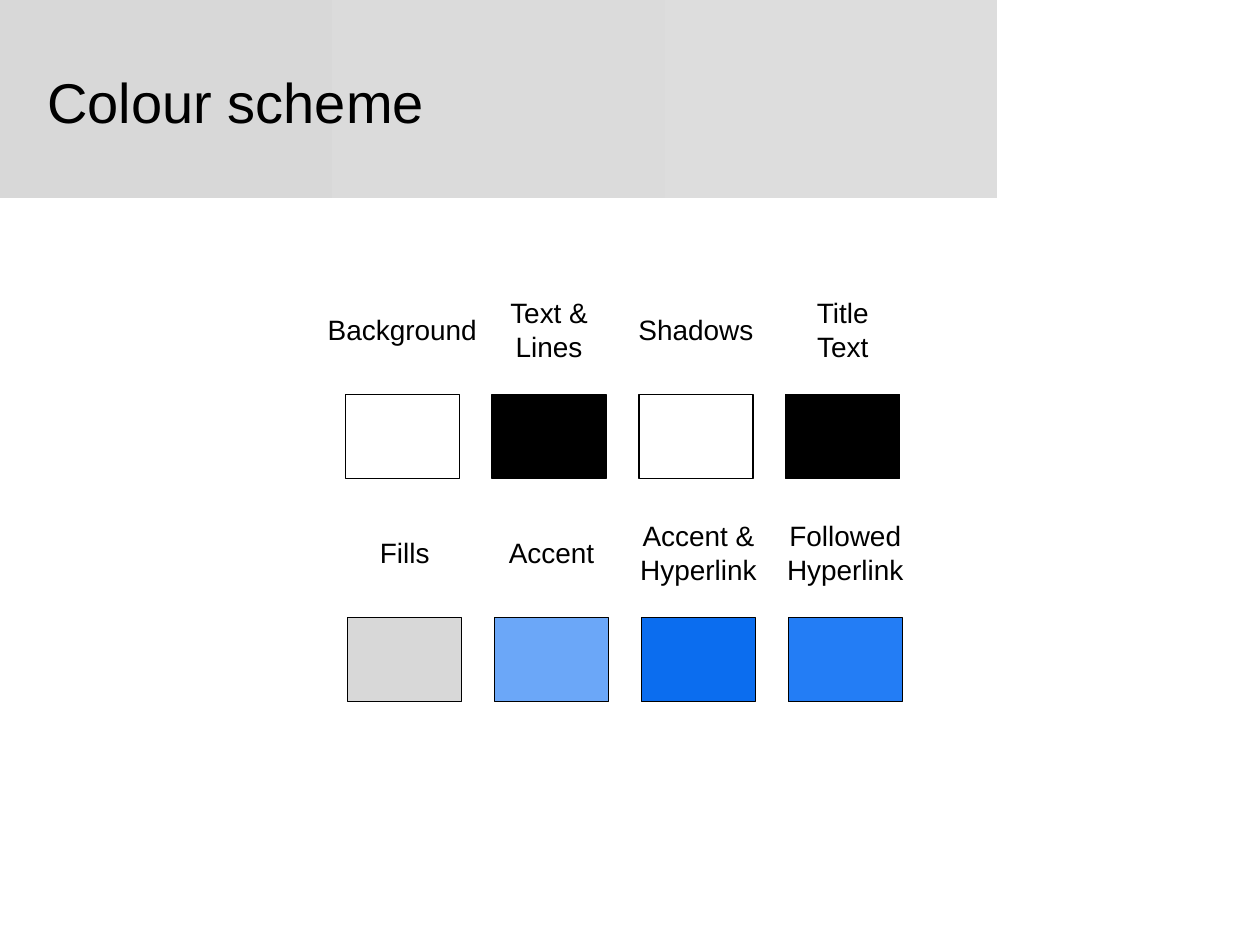
from pptx import Presentation
from pptx import util as u
from pptx.dml.color import RGBColor
from pptx.enum import shapes, text

FONT = "Arial"


def colour(hex_string):
    return RGBColor.from_string(hex_string)


def set_font(paragraph, size):
    paragraph.font.name = FONT
    paragraph.font.size = u.Pt(size)
    paragraph.font.color.rgb = colour("000000")


prs = Presentation()
prs.slide_width, prs.slide_height = u.Cm(25.4), u.Cm(19.05)
slide = prs.slides.add_slide(prs.slide_layouts[5])

# Header band, placed behind the title
band = slide.shapes.add_shape(shapes.MSO_SHAPE.RECTANGLE, 0, 0, u.Cm(20.11), u.Cm(4))
band.shadow.inherit = False
band.line.fill.background()
band.fill.gradient()
band.fill.gradient_angle = 0
for stop, shade in zip(band.fill.gradient_stops, ("D8D8D8", "DDDDDD")):
    stop.color.rgb = colour(shade)
slide.shapes._spTree.insert(2, band._element)

# Title
title = slide.shapes.title
title.left, title.top, title.width, title.height = u.Cm(0.7), u.Cm(0.76), u.Cm(19), u.Cm(2.57)
title.text_frame.text = "Colour scheme"
title.text_frame.vertical_anchor = text.MSO_ANCHOR.MIDDLE
title.text_frame.paragraphs[0].alignment = text.PP_ALIGN.LEFT
set_font(title.text_frame.paragraphs[0], 32)

# Swatch rows: left edge, top edge, then label, label width and colour of each swatch
swatch_width, swatch_height, pitch = 2.3, 1.7, 2.96
label_rise = 1.3  # from the middle of a label down to its swatch
rows = [
    (6.96, 7.95, [("Background", 3.53, "FFFFFF"), ("Text &\nLines", 2.13, "000000"),
                  ("Shadows", 2.86, "FFFFFF"), ("Title\vText", 1.6, "000000")]),
    (7.01, 12.45, [("Fills", 1.5, "D8D8D8"), ("Accent", 2.24, "6BA7F8"),
                   ("Accent &\nHyperlink", 2.92, "0B6DEF"),
                   ("Followed\nHyperlink", 2.92, "237DF5")]),
]
for row_left, row_top, entries in rows:
    for column, (wording, label_width, shade) in enumerate(entries):
        left = row_left + column * pitch
        swatch = slide.shapes.add_shape(
            shapes.MSO_SHAPE.RECTANGLE, u.Cm(left), u.Cm(row_top),
            u.Cm(swatch_width), u.Cm(swatch_height))
        swatch.shadow.inherit = False
        swatch.fill.solid()
        swatch.fill.fore_color.rgb = colour(shade)
        swatch.line.color.rgb = colour("000000")
        swatch.line.width = u.Pt(0.75)

        # Label centred above the swatch
        label_height = 0.94 if len(wording.splitlines()) == 1 else 1.63
        label = slide.shapes.add_textbox(
            u.Cm(left + (swatch_width - label_width) / 2),
            u.Cm(row_top - label_rise - label_height / 2),
            u.Cm(label_width), u.Cm(label_height)).text_frame
        label.word_wrap = False
        label.auto_size = text.MSO_AUTO_SIZE.SHAPE_TO_FIT_TEXT
        label.text = wording
        for paragraph in label.paragraphs:
            paragraph.alignment = text.PP_ALIGN.CENTER
            set_font(paragraph, 16)

prs.save("out.pptx")
